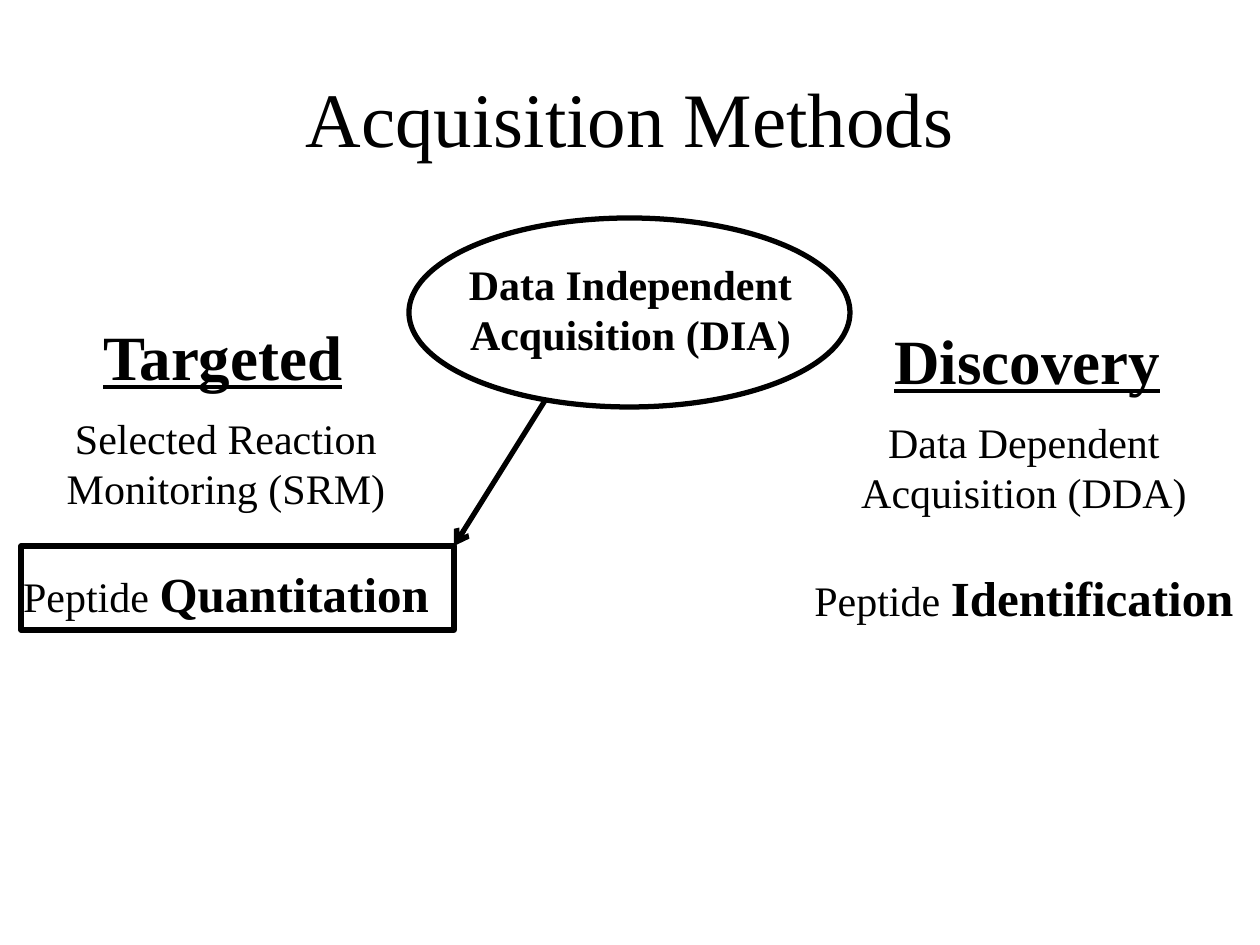
"""Build the slide that compares targeted, discovery and DIA acquisition."""
from dataclasses import dataclass

from lxml import etree
from pptx import Presentation
from pptx import util as u
from pptx.dml.color import RGBColor
from pptx.enum import shapes, text
from pptx.oxml.ns import qn

PX = u.Inches(1) / 126


@dataclass(frozen=True)
class Theme:
    font: str = "Times New Roman"
    ink: RGBColor = RGBColor(0, 0, 0)
    title: int = 44
    heading: int = 36
    emphasis: int = 28
    body: int = 24
    line: int = 3


THEME = Theme()


def px(*lengths):
    return [u.Emu(round(length * PX)) for length in lengths]


def style(font, size, bold=False, underline=False):
    font.name, font.size, font.color.rgb = THEME.font, u.Pt(size), THEME.ink
    font.bold, font.underline = bold, underline


def add_title(slide, wording):
    title = slide.shapes.title
    title.left, title.top, title.width, title.height = px(63, 38, 1134, 158)
    title.text_frame.vertical_anchor = text.MSO_ANCHOR.MIDDLE
    paragraph = title.text_frame.paragraphs[0]
    paragraph.text = wording
    paragraph.alignment = text.PP_ALIGN.CENTER
    style(paragraph.font, THEME.title)


def add_text(parent, box, lines, size, align, wrap=False, **look):
    frame = parent.add_textbox(*px(*box)).text_frame
    frame.word_wrap = wrap
    frame.auto_size = text.MSO_AUTO_SIZE.SHAPE_TO_FIT_TEXT
    frame.text = "\n".join(lines)
    for paragraph in frame.paragraphs:
        paragraph.alignment = align
        style(paragraph.font, size, **look)
    return frame


def add_heading(parent, box, wording):
    add_text(parent, box, [wording], THEME.heading, text.PP_ALIGN.LEFT,
             bold=True, underline=True)


def add_method(parent, left, top, method, goal):
    frame = add_text(parent, (left, top, 494, 224), [method, "Peptide "],
                     THEME.body, text.PP_ALIGN.CENTER, wrap=True)
    purpose = frame.paragraphs[1]
    purpose.space_before = u.Pt(29)
    goal_run = purpose.add_run()
    goal_run.text = goal
    style(goal_run.font, THEME.emphasis, bold=True)


def add_outline(parent, kind, box):
    outline = parent.add_shape(kind, *px(*box))
    outline.shadow.inherit = False
    outline.fill.background()
    outline.line.color.rgb = THEME.ink
    outline.line.width = u.Pt(THEME.line)


def add_arrow(parent, start, end):
    arrow = parent.add_connector(shapes.MSO_CONNECTOR.STRAIGHT, *px(*start, *end))
    arrow.line.color.rgb = THEME.ink
    arrow.line.width = u.Pt(THEME.line)
    etree.SubElement(arrow.line._get_or_add_ln(), qn("a:tailEnd"), type="arrow")
    etree.SubElement(arrow._element.spPr, qn("a:effectLst"))


def main():
    prs = Presentation()
    prs.slide_width, prs.slide_height = px(1260, 945)
    slide = prs.slides.add_slide(prs.slide_layouts[5])
    add_title(slide, "Acquisition Methods")

    add_heading(slide.shapes, (91, 311, 266, 89), "Targeted")
    add_heading(slide.shapes, (882, 315, 294, 89), "Discovery")
    add_method(slide.shapes, 777, 410, "Data Dependent Acquisition (DDA)", "Identification")

    independent = slide.shapes.add_group_shape().shapes
    add_text(independent, (454, 252, 353, 115),
             ["Data Independent", "Acquisition (DIA)"],
             THEME.body, text.PP_ALIGN.CENTER, bold=True)
    add_outline(independent, shapes.MSO_SHAPE.OVAL, (409, 218, 441, 189))

    add_method(slide.shapes, -21, 406, "Selected Reaction Monitoring (SRM)", "Quantitation")

    quantitation = slide.shapes.add_group_shape().shapes
    add_arrow(quantitation, (546, 399), (454, 546))
    add_outline(quantitation, shapes.MSO_SHAPE.RECTANGLE, (21, 546, 433, 84))

    prs.save("out.pptx")


if __name__ == "__main__":
    main()
